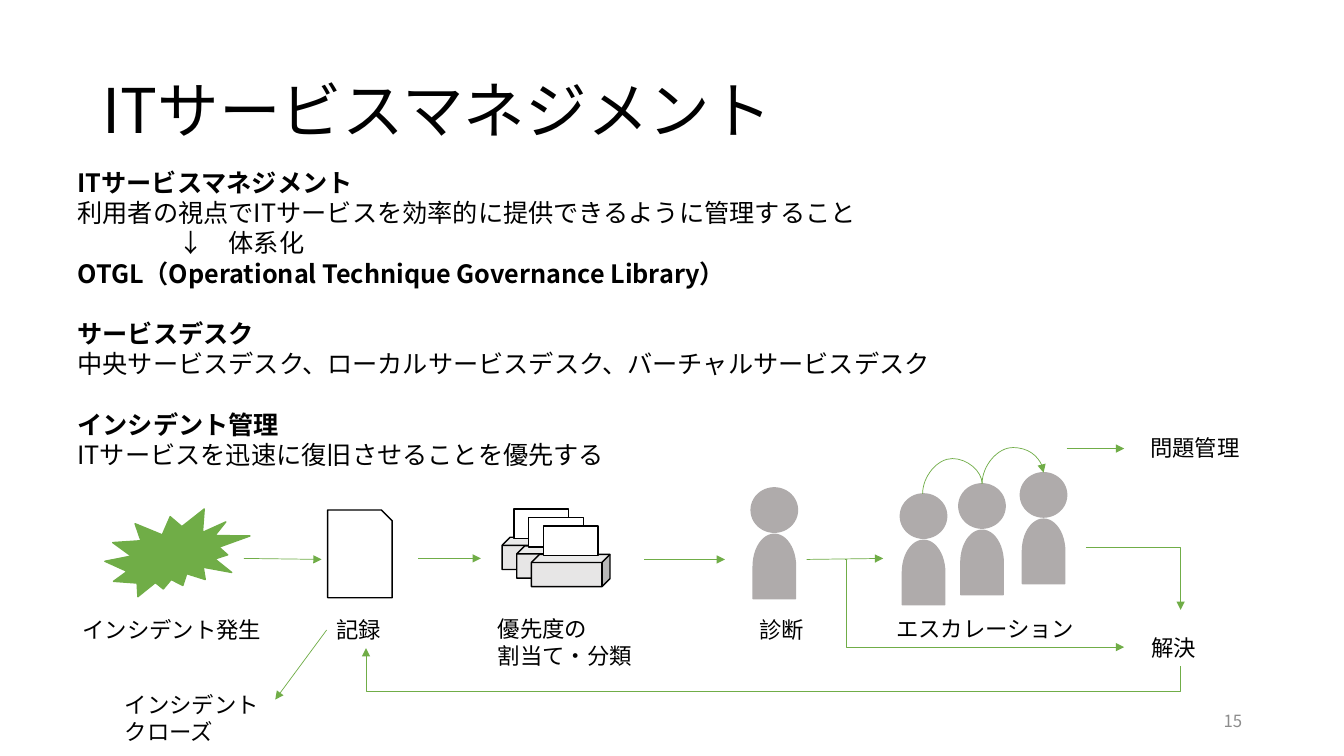
from lxml.etree import SubElement
from pptx import Presentation
from pptx.dml.color import RGBColor
from pptx.enum.shapes import MSO_CONNECTOR, MSO_SHAPE
from pptx.enum.text import MSO_ANCHOR, PP_ALIGN
from pptx.oxml.ns import qn
from pptx.util import Inches, Pt

FONT = "Noto Sans CJK JP"
BLACK = RGBColor(0x00, 0x00, 0x00)
WHITE = RGBColor(0xFF, 0xFF, 0xFF)
GREEN = RGBColor(0x70, 0xAD, 0x47)
PERSON_GRAY = RGBColor(0xAF, 0xAB, 0xAB)
TRAY_GRAY = RGBColor(0xE7, 0xE6, 0xE6)
NUMBER_GRAY = RGBColor(0x8C, 0x8C, 0x8C)

# Text, bold, space before in points, left indent in inches
EXPLANATION = [
    ("ITサービスマネジメント", True, 0, 0),
    ("利用者の視点でITサービスを効率的に提供できるように管理すること", False, 0, 0),
    ("↓　体系化", False, 0, 1),
    ("OTGL（Operational Technique Governance Library）", True, 0, 0),
    ("サービスデスク", True, 21.6, 0),
    ("中央サービスデスク、ローカルサービスデスク、バーチャルサービスデスク", False, 0, 0),
    ("インシデント管理", True, 21.6, 0),
    ("ITサービスを迅速に復旧させることを優先する", False, 0, 0),
]

# Positions below are inches from the top left of the flow
FLOW_LABELS = [
    (["インシデント発生"], 0.02, 1.86, 2.36),
    (["記録"], 2.54, 1.86, 0.78),
    (["優先度の", "割当て・分類"], 4.14, 1.85, 2.36),
    (["診断"], 6.73, 1.86, 0.75),
    (["エスカレーション"], 8.09, 1.85, 2.36),
    (["問題管理"], 10.61, 0.06, 1.31),
    (["解決"], 10.62, 2.04, 0.78),
    (["インシデント", "クローズ"], 0.44, 2.61, 1.66),
]
PEOPLE = [(6.75, 0.64), (8.23, 0.7), (8.81, 0.6), (9.42, 0.49)]
STRAIGHT_ARROWS = [
    ((1.72, 1.34), (2.49, 1.35)),
    ((3.45, 1.34), (4.07, 1.34)),
    ((5.69, 1.35), (6.49, 1.35)),
    ((7.3, 1.35), (8.06, 1.34)),
    ((9.88, 0.25), (10.45, 0.25)),
    ((2.54, 2.05), (2.03, 2.74)),
]


def add_paragraph(frame, text, *, size, bold=False, color=BLACK, align=PP_ALIGN.LEFT,
                  before=0, indent=0, line_spacing=None):
    """Write into the first paragraph while it is unused, else into a new one."""
    paragraph = frame.paragraphs[0]
    if paragraph.runs:
        paragraph = frame.add_paragraph()
    paragraph.alignment = align
    paragraph.space_before = Pt(before)
    paragraph.line_spacing = line_spacing
    if indent:
        paragraph._p.get_or_add_pPr().set("marL", str(Inches(indent)))
    run = paragraph.add_run()
    run.text = text
    run.font.size = Pt(size)
    run.font.bold = bold
    run.font.name = FONT
    run.font.color.rgb = color
    SubElement(run._r.get_or_add_rPr(), qn("a:ea"), typeface=FONT)


def add_text_frame(slide, left, top, width, height, anchor=MSO_ANCHOR.TOP):
    box = slide.shapes.add_textbox(Inches(left), Inches(top), Inches(width), Inches(height))
    box.text_frame.word_wrap = True
    box.text_frame.vertical_anchor = anchor
    return box.text_frame


def add_figure(slide, kind, left, top, width, height, fill, line=BLACK, rotation=0):
    shape = slide.shapes.add_shape(kind, Inches(left), Inches(top), Inches(width), Inches(height))
    shape.shadow.inherit = False
    shape.fill.solid()
    shape.fill.fore_color.rgb = fill
    shape.line.color.rgb = line
    shape.line.width = Pt(1)
    shape.rotation = rotation


def add_link(slide, start, end, kind=MSO_CONNECTOR.STRAIGHT, middle=None,
             vertical=False, arrow=True):
    """Join two points; middle is where the centre segment lies on the leaving axis.

    A vertical link leaves up or down, so it is laid sideways and turned by 90 degrees.
    """
    axis = 1 if vertical else 0
    span = end[axis] - start[axis]
    bend = None if middle is None else (middle - start[axis]) / span
    if vertical:
        center_x, center_y = (start[0] + end[0]) / 2, (start[1] + end[1]) / 2
        half_x, half_y = (end[0] - start[0]) / 2, (end[1] - start[1]) / 2
        start = (center_x - half_y, center_y + half_x)
        end = (center_x + half_y, center_y - half_x)
    connector = slide.shapes.add_connector(kind, *map(Inches, start + end))
    connector.line.color.rgb = GREEN
    connector.line.width = Pt(0.5)
    properties = connector._element.spPr
    if vertical:
        properties.find(qn("a:xfrm")).set("rot", "5400000")
    if bend is not None:
        adjustments = properties.find(qn("a:prstGeom")).find(qn("a:avLst"))
        SubElement(adjustments, qn("a:gd"), name="adj1", fmla=f"val {round(bend * 100000)}")
    if arrow:
        SubElement(properties.find(qn("a:ln")), qn("a:tailEnd"), type="triangle")
    SubElement(properties, qn("a:effectLst"))


def add_title(slide, left, top, width, height):
    frame = add_text_frame(slide, left, top, width, height, MSO_ANCHOR.MIDDLE)
    add_paragraph(frame, "ITサービスマネジメント", size=44, line_spacing=0.9)


def add_slide_number(slide, left, top, width, height):
    frame = add_text_frame(slide, left, top, width, height, MSO_ANCHOR.MIDDLE)
    add_paragraph(frame, "15", size=12, color=NUMBER_GRAY, align=PP_ALIGN.RIGHT)


def add_explanation(slide, left, top, width, height):
    frame = add_text_frame(slide, left, top, width, height)
    for text, bold, before, indent in EXPLANATION:
        add_paragraph(frame, text, size=18, bold=bold, before=before, indent=indent)


def add_person(slide, left, top):
    add_figure(slide, MSO_SHAPE.FLOWCHART_CONNECTOR, left, top, 0.46, 0.44,
               PERSON_GRAY, PERSON_GRAY)
    add_figure(slide, MSO_SHAPE.FLOWCHART_DELAY, left - 0.09, top + 0.57, 0.64, 0.42,
               PERSON_GRAY, PERSON_GRAY, rotation=270)


def add_trays(slide, left, top):
    for index in range(3):
        x, y = left + index * 0.145, top + index * 0.085
        add_figure(slide, MSO_SHAPE.CUBE, x, y + 0.28, 0.78, 0.32, TRAY_GRAY)
        add_figure(slide, MSO_SHAPE.RECTANGLE, x + 0.12, y, 0.54, 0.29, WHITE)


def add_incident_flow(slide, left, top):
    def at(x, y):
        return left + x, top + y

    add_figure(slide, MSO_SHAPE.EXPLOSION2, *at(0.34, 0.85), 1.44, 0.87, GREEN, GREEN)
    add_figure(slide, MSO_SHAPE.SNIP_1_RECTANGLE, *at(2.55, 0.86), 0.64, 0.87, WHITE)
    add_trays(slide, *at(4.28, 0.85))
    for person in PEOPLE:
        add_person(slide, *at(*person))
    for lines, x, y, width in FLOW_LABELS:
        frame = add_text_frame(slide, *at(x, y), width, 0.1 + 0.27 * len(lines))
        for line in lines:
            add_paragraph(frame, line, size=16)
    for start, end in STRAIGHT_ARROWS:
        add_link(slide, at(*start), at(*end))

    elbow, curve = MSO_CONNECTOR.ELBOW, MSO_CONNECTOR.CURVE
    add_link(slide, at(7.68, 1.35), at(10.45, 2.22), elbow, left + 7.69)
    add_link(slide, at(10.07, 1.23), at(11.01, 1.85), elbow, left + 11.01)
    add_link(slide, at(11.01, 2.41), at(2.93, 2.23), elbow, top + 2.66, vertical=True)
    add_link(slide, at(8.45, 0.7), at(9.04, 0.6), curve, top + 0.35, vertical=True, arrow=False)
    add_link(slide, at(9.04, 0.6), at(9.65, 0.49), curve, top + 0.24, vertical=True)


def main():
    presentation = Presentation()
    presentation.slide_width = Inches(13.33)
    presentation.slide_height = Inches(7.5)
    slide = presentation.slides.add_slide(presentation.slide_layouts[6])
    add_title(slide, 0.92, 0.4, 11.5, 1.45)
    add_slide_number(slide, 9.42, 6.95, 3, 0.4)
    add_explanation(slide, 0.67, 1.61, 11.99, 3.13)
    add_incident_flow(slide, 0.7, 4.2)
    presentation.save("out.pptx")


if __name__ == "__main__":
    main()
